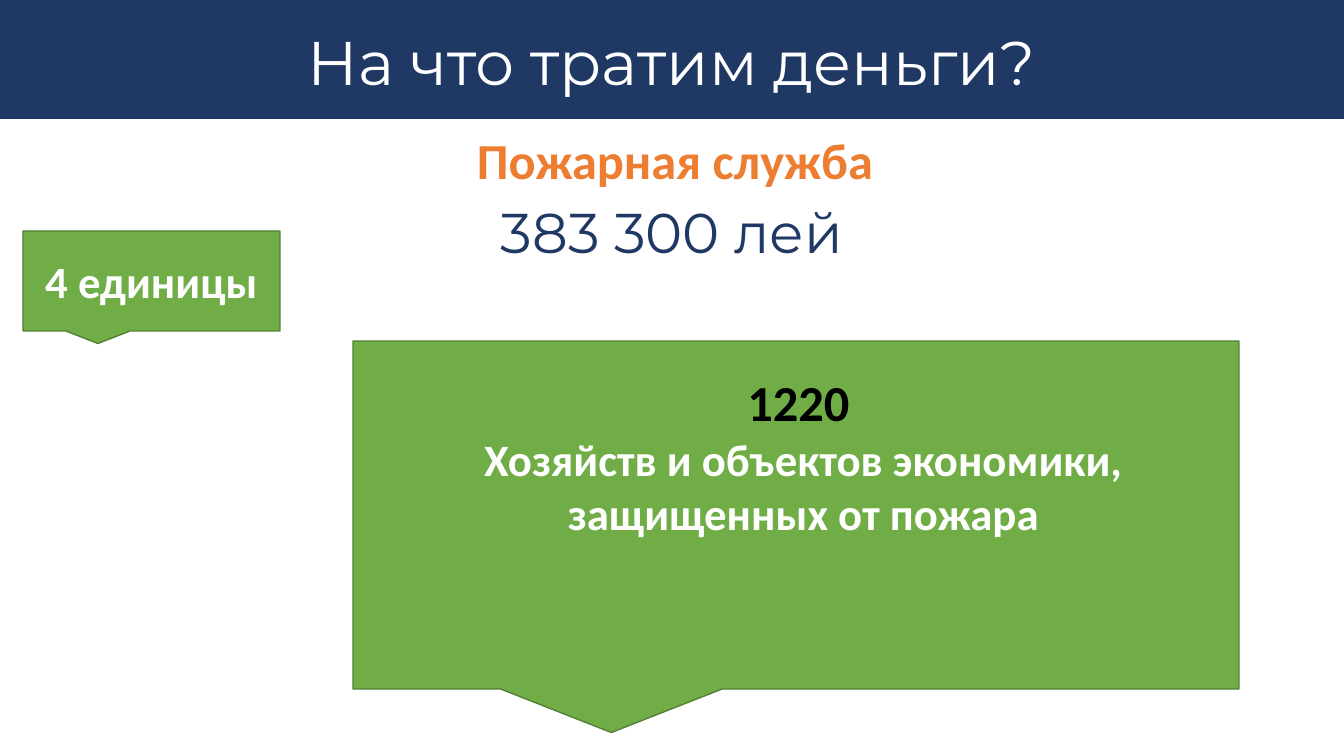
import pptx
import pptx.dml.color
import pptx.enum.shapes
import pptx.enum.text
import pptx.util

WIDTH, HEIGHT = 1344, 756
EMU_PER_PX = 12192000 / WIDTH

NAVY, ORANGE, GREEN, DARK_GREEN = "203864", "ED7D31", "70AD47", "538035"
WHITE, BLACK = "FFFFFF", "000000"
HEADING_FONT, BODY_FONT = "Montserrat", "Calibri"

SHAPES = pptx.enum.shapes.MSO_SHAPE
MIDDLE = pptx.enum.text.MSO_ANCHOR.MIDDLE


def px(length):
    return round(length * EMU_PER_PX)


def color(hex_string):
    return pptx.dml.color.RGBColor.from_string(hex_string)


def add_run(paragraph, text, size, hex_string, font=BODY_FONT):
    run = paragraph.add_run()
    run.text = text
    run.font.name = font
    run.font.size = pptx.util.Pt(size)
    run.font.bold = font == BODY_FONT
    run.font.color.rgb = color(hex_string)


def fill_text(shape, paragraphs):
    """Write centred paragraphs, each a list of add_run arguments."""
    frame = shape.text_frame
    frame.word_wrap = True
    for index, runs in enumerate(paragraphs):
        paragraph = frame.add_paragraph() if index else frame.paragraphs[0]
        paragraph.alignment = pptx.enum.text.PP_ALIGN.CENTER
        for run in runs:
            add_run(paragraph, *run)


def add_text(slide, box, paragraphs):
    text_box = slide.shapes.add_textbox(*map(px, box))
    fill_text(text_box, paragraphs)
    return text_box


def add_block(slide, kind, box, fill, outline=None):
    shape = slide.shapes.add_shape(kind, *map(px, box))
    shape.shadow.inherit = False
    shape.fill.solid()
    shape.fill.fore_color.rgb = color(fill)
    if outline:
        shape.line.color.rgb = color(outline)
        shape.line.width = pptx.util.Pt(1)
    else:
        shape.line.fill.background()
    return shape


def add_callout(slide, box):
    return add_block(slide, SHAPES.RECTANGULAR_CALLOUT, box, GREEN, DARK_GREEN)


def add_title_band(slide, box):
    left, top, width, height = box
    add_block(slide, SHAPES.RECTANGLE, box, NAVY)
    title = add_text(slide, (left + 17, top + 25, width - 34, 82),
                     [[("На что тратим деньги?", 44, WHITE, HEADING_FONT)]])
    title.text_frame.vertical_anchor = MIDDLE
    title.text_frame.paragraphs[0].line_spacing = 0.9


def add_spending(slide, box):
    left, top, width, height = box
    add_text(slide, (left, top, width, 72), [[("Пожарная служба", 36, ORANGE)]])
    add_text(slide, (left, top + 69, width - 6, height - 69),
             [[("383 300 лей", 40, NAVY, HEADING_FONT)]])


def add_protected_objects(slide, box):
    left, top, width, height = box
    add_callout(slide, box)
    add_text(slide, (left + 78, top + 25, 745, 179), [
        [("1220", 36, BLACK), (" ", 32, WHITE)],
        [("Хозяйств и объектов экономики, защищенных от пожара", 32, WHITE)],
    ])


def add_staff(slide, box):
    callout = add_callout(slide, box)
    fill_text(callout, [[("4 единицы", 32, WHITE)]])
    callout.text_frame.vertical_anchor = MIDDLE


def main():
    presentation = pptx.Presentation()
    presentation.slide_width, presentation.slide_height = px(WIDTH), px(HEIGHT)
    slide = presentation.slides.add_slide(presentation.slide_layouts[6])
    add_title_band(slide, (0, 0, WIDTH, 119))
    add_spending(slide, (23, 124, 1304, 147))
    add_protected_objects(slide, (353, 341, 886, 348))
    add_staff(slide, (23, 231, 257, 100))
    presentation.save("out.pptx")


if __name__ == "__main__":
    main()
